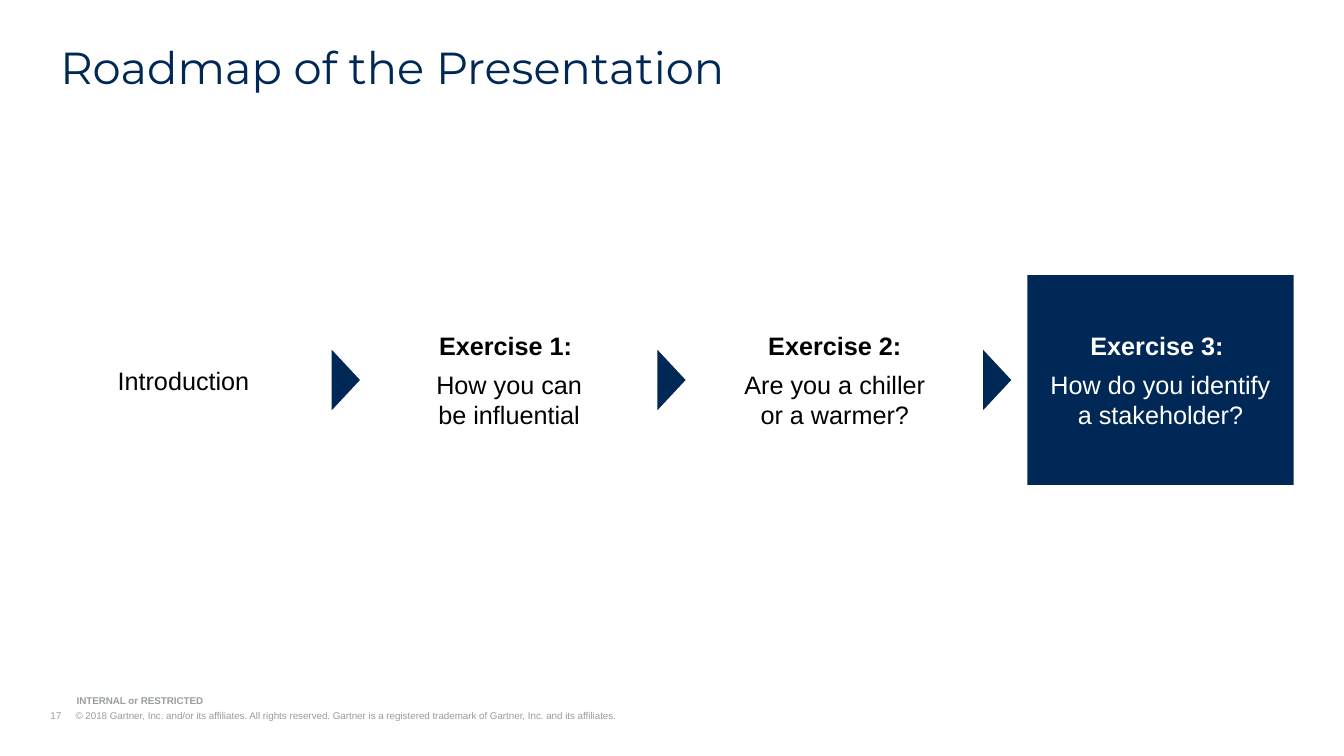
from lxml import etree
from pptx import Presentation
from pptx.dml.color import RGBColor
from pptx.enum import shapes, text
from pptx.oxml import ns
from pptx.util import Inches, Pt

COLORS = {"navy": "002856", "black": "000000", "white": "FFFFFF", "gray": "979D9D"}

deck = Presentation()
deck.slide_width, deck.slide_height = Inches(13.33), Inches(7.5)
slide = deck.slides.add_slide(deck.slide_layouts[6])


def fill_navy(shape):
    shape.shadow.inherit = False
    shape.fill.solid()
    shape.fill.fore_color.rgb = RGBColor.from_string(COLORS["navy"])
    shape.line.fill.background()


def write(frame, words, size=18, color="black", font="Arial", bold=False, after=0,
          align=text.PP_ALIGN.LEFT, spacing=None, hanging=None, first=True):
    paragraph = frame.paragraphs[0] if first else frame.add_paragraph()
    paragraph.text = words
    paragraph.alignment = align
    paragraph.space_after = Pt(after)
    if spacing:
        paragraph.line_spacing = spacing
    if hanging:
        properties = paragraph._p.get_or_add_pPr()
        properties.set("marL", str(hanging))
        properties.set("indent", str(-hanging))
        tabs = etree.SubElement(properties, ns.qn("a:tabLst"))
        etree.SubElement(tabs, ns.qn("a:tab"), pos=str(hanging), algn="l")
    for run in paragraph.runs:
        run.font.size, run.font.name, run.font.bold = Pt(size), font, bold
        run.font.color.rgb = RGBColor.from_string(COLORS[color])


# Footer
footers = [
    (0.5, 7.04, 7.99, False,
     "17\t© 2018 Gartner, Inc. and/or its affiliates. All rights reserved.\u00a0"
     "Gartner is a registered trademark of Gartner, Inc. and its affiliates."),
    (0.76, 6.89, 2.53, True, "INTERNAL or RESTRICTED"),
]
for left, top, width, bold, words in footers:
    footer = slide.shapes.add_textbox(
        Inches(left), Inches(top), Inches(width), Inches(0.12)).text_frame
    footer.word_wrap = True
    footer.vertical_anchor = text.MSO_ANCHOR.BOTTOM
    footer.margin_left = footer.margin_right = footer.margin_top = footer.margin_bottom = 0
    write(footer, words, size=7, color="gray", bold=bold, hanging=Inches(0.25))

# Roadmap stages; the current one is highlighted
stages = [
    (None, "Introduction"),
    ("Exercise 1: ", "How you can\nbe influential"),
    ("Exercise 2:", "Are you a chiller\nor a warmer?"),
    ("Exercise 3: ", "How do you identify\na stakeholder?"),
]
current = 3
LEFT, PITCH = 0.5, 3.23
for i, (heading, topic) in enumerate(stages):
    place = Inches(LEFT + i * PITCH), Inches(2.73), Inches(2.64), Inches(2.08)
    if i == current:
        stage = slide.shapes.add_shape(shapes.MSO_SHAPE.RECTANGLE, *place)
        fill_navy(stage)
    else:
        stage = slide.shapes.add_textbox(*place)
    frame = stage.text_frame
    frame.word_wrap = True
    frame.vertical_anchor = text.MSO_ANCHOR.MIDDLE
    style = {"color": "white" if i == current else "black", "align": text.PP_ALIGN.CENTER}
    if heading:
        write(frame, heading, bold=True, after=6, **style)
    write(frame, topic, after=12, first=not heading, **style)

# Arrowheads between stages
for i in range(len(stages) - 1):
    arrow = slide.shapes.add_shape(
        shapes.MSO_SHAPE.ISOSCELES_TRIANGLE,
        Inches(3.13 + i * PITCH), Inches(3.63), Inches(0.6), Inches(0.28))
    arrow.rotation = 90
    fill_navy(arrow)

# Title
title = slide.shapes.add_textbox(
    Inches(LEFT), Inches(0.4), Inches(12.33), Inches(0.48)).text_frame
title.word_wrap = True
write(title, "Roadmap of the Presentation", size=32, color="navy", font="Montserrat",
      after=12, spacing=0.9)

deck.save("out.pptx")
